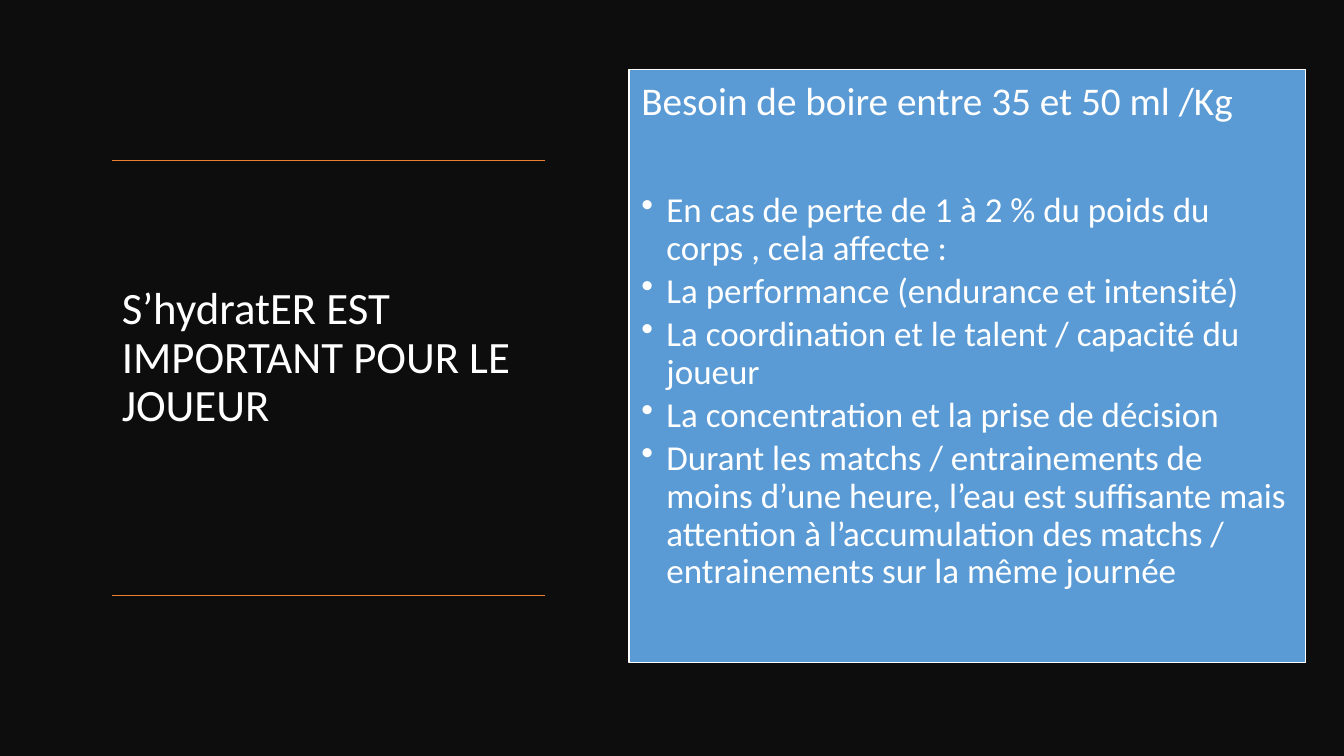
import pptx
import pptx.util
import pptx.dml.color
import pptx.enum.shapes
import pptx.enum.text
import pptx.oxml.ns
import lxml.etree

Inches = pptx.util.Inches
Pt = pptx.util.Pt
RECTANGLE = pptx.enum.shapes.MSO_SHAPE.RECTANGLE
STRAIGHT = pptx.enum.shapes.MSO_CONNECTOR.STRAIGHT
WHITE = "FFFFFF"


def color(value):
    return pptx.dml.color.RGBColor.from_string(value)


def style_paragraph(paragraph, text, size):
    paragraph.text = text
    paragraph.alignment = pptx.enum.text.PP_ALIGN.LEFT
    paragraph.line_spacing = 0.9
    paragraph.font.name = "Calibri"
    paragraph.font.size = Pt(size)
    paragraph.font.color.rgb = color(WHITE)


presentation = pptx.Presentation()
presentation.slide_width = Inches(13.33)
presentation.slide_height = Inches(7.5)
slide = presentation.slides.add_slide(presentation.slide_layouts[6])

backdrop = slide.shapes.add_shape(
    RECTANGLE, 0, 0, presentation.slide_width, presentation.slide_height)
backdrop.shadow.inherit = False
backdrop.fill.solid()
backdrop.fill.fore_color.rgb = color("0D0D0D")
backdrop.line.fill.background()

title = slide.shapes.add_textbox(Inches(1.11), Inches(1.21), Inches(4.3), Inches(4.7))
title.text_frame.word_wrap = True
title.text_frame.vertical_anchor = pptx.enum.text.MSO_ANCHOR.MIDDLE
style_paragraph(title.text_frame.paragraphs[0], "S’hydratER EST IMPORTANT POUR LE JOUEUR", 32)

for rule_top in (1.59, 5.91):
    rule = slide.shapes.add_connector(
        STRAIGHT, Inches(5.41), Inches(rule_top), Inches(1.11), Inches(rule_top))
    rule.line.color.rgb = color("ED7D31")
    rule.line.width = Pt(1)
    lxml.etree.SubElement(rule._element.spPr, pptx.oxml.ns.qn("a:effectLst"))

panel = slide.shapes.add_shape(
    RECTANGLE, Inches(6.24), Inches(0.69), Inches(6.71), Inches(5.88))
panel.shadow.inherit = False
panel.fill.solid()
panel.fill.fore_color.rgb = color("5B9BD5")
panel.line.color.rgb = color(WHITE)
panel.line.width = Pt(1)

frame = panel.text_frame
frame.word_wrap = True
frame.vertical_anchor = pptx.enum.text.MSO_ANCHOR.TOP
frame.margin_left = frame.margin_right = Inches(0.12)
frame.margin_top = frame.margin_bottom = Inches(0.12)

heading = frame.paragraphs[0]
style_paragraph(heading, "Besoin de boire entre 35 et 50 ml /Kg", 28)
heading.space_after = Pt(49)

points = [
    "En cas de perte de 1 à 2 % du poids du corps , cela affecte :",
    "La performance (endurance et intensité)",
    "La coordination et le talent / capacité du joueur",
    "La concentration et la prise de décision",
    "Durant les matchs / entrainements de moins d’une heure, l’eau est suffisante "
    "mais attention à l’accumulation des matchs / entrainements sur la même journée",
]
for point in points:
    paragraph = frame.add_paragraph()
    style_paragraph(paragraph, point, 25)
    paragraph.space_after = Pt(3.75)
    properties = paragraph._p.get_or_add_pPr()
    properties.set("marL", str(Inches(0.25)))
    properties.set("indent", str(Inches(-0.25)))
    bullet = lxml.etree.Element(pptx.oxml.ns.qn("a:buChar"), char="•")
    properties.find(pptx.oxml.ns.qn("a:spcAft")).addnext(bullet)

presentation.save("out.pptx")
